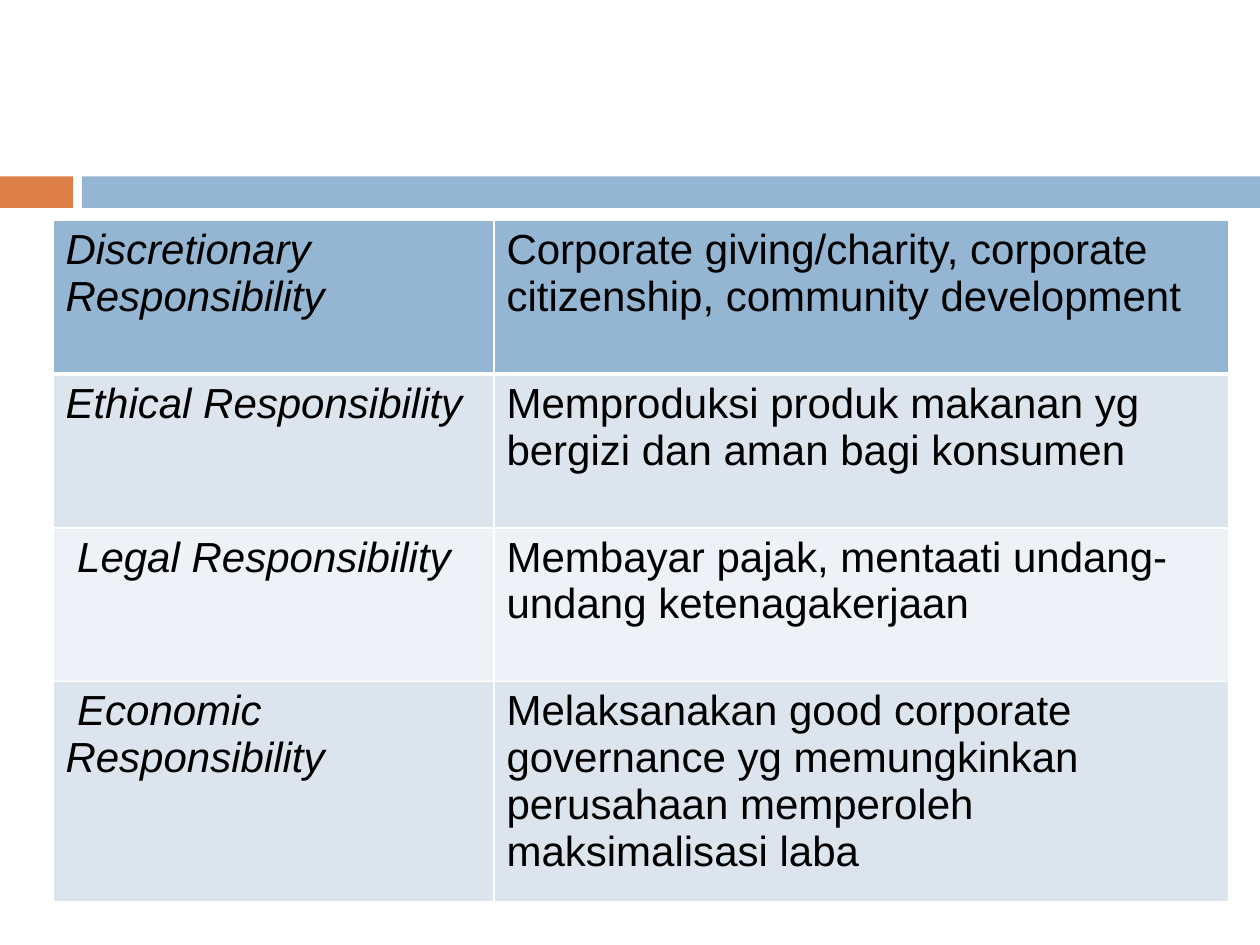
import pptx
import pptx.util
import pptx.dml.color
import pptx.enum.shapes
import pptx.oxml
import pptx.oxml.ns

Inches, Pt = pptx.util.Inches, pptx.util.Pt

# Content
DUTIES = [
    ("Discretionary Responsibility",
     "Corporate giving/charity, corporate citizenship, community development"),
    ("Ethical Responsibility",
     "Memproduksi produk makanan yg bergizi dan aman bagi konsumen"),
    (" Legal Responsibility",
     "Membayar pajak, mentaati undang-undang ketenagakerjaan"),
    (" Economic Responsibility",
     "Melaksanakan good corporate governance yg memungkinkan perusahaan "
     "memperoleh maksimalisasi laba"),
]
BLUE = "94B6D2"
BANDS = ["DCE5EE", "EEF2F7"]
BARS = [(0, 0.58, "DD8047"), (0.65, 9.35, BLUE)]
COLS = [3.5, 5.83]
ROWS = [1.22, 1.22, 1.22, 1.75]
FONT = {"name": "Arial", "size": Pt(24), "bold": False}


def paint(fill, color):
    fill.solid()
    fill.fore_color.rgb = pptx.dml.color.RGBColor.from_string(color)


def edge(cell, side, width):
    line = pptx.oxml.parse_xml(
        f'<a:{side} {pptx.oxml.ns.nsdecls("a")} w="{Pt(width)}">'
        '<a:solidFill><a:srgbClr val="FFFFFF"/></a:solidFill>'
        f'</a:{side}>')
    cell._tc.get_or_add_tcPr().append(line)


deck = pptx.Presentation()
deck.slide_width, deck.slide_height = Inches(10), Inches(7.5)
slide = deck.slides.add_slide(deck.slide_layouts[6])

# Bars above the table
for left, width, color in BARS:
    bar = slide.shapes.add_shape(
        pptx.enum.shapes.MSO_SHAPE.RECTANGLE,
        Inches(left), Inches(1.4), Inches(width), Inches(0.25))
    bar.shadow.inherit = False
    paint(bar.fill, color)
    bar.line.fill.background()

# Table grid
table = slide.shapes.add_table(
    len(ROWS), len(COLS), Inches(0.42), Inches(1.75),
    Inches(sum(COLS)), Inches(sum(ROWS))).table
for col, width in zip(table.columns, COLS):
    col.width = Inches(width)
for row, height in zip(table.rows, ROWS):
    row.height = Inches(height)

# Cells: a blue first row, then two bands in turn
for r, duty in enumerate(DUTIES):
    for c, text in enumerate(duty):
        cell = table.cell(r, c)
        for side in ("lnL", "lnR", "lnT", "lnB"):
            thick = (r, side) in [(0, "lnB"), (1, "lnT")]
            edge(cell, side, 3 if thick else 1)
        paint(cell.fill, BANDS[(r - 1) % 2] if r else BLUE)
        cell.text = text
        font = cell.text_frame.paragraphs[0].runs[0].font
        for key, value in FONT.items():
            setattr(font, key, value)
        font.italic = c == 0
        paint(font.fill, "000000")

deck.save("out.pptx")
